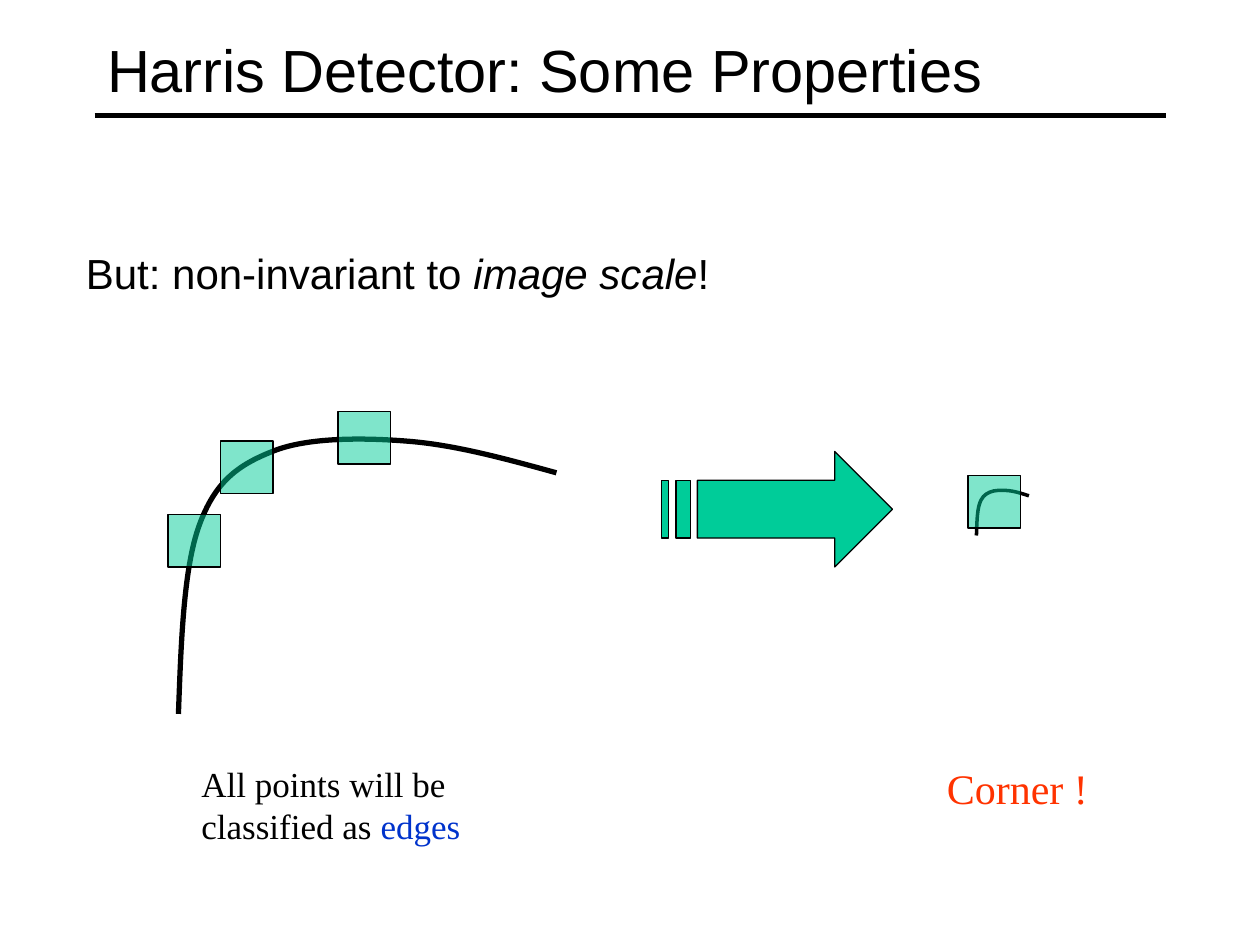
from dataclasses import dataclass
import pptx
import pptx.dml.color
import pptx.enum.shapes
import pptx.enum.text
import pptx.oxml
import pptx.oxml.ns
import pptx.util

Pt = pptx.util.Pt
qn = pptx.oxml.ns.qn
BLACK, GREEN, BLUE, RED = "000000", "00CC99", "0033CC", "FF3300"
SIDE = 30
BEND = [
    (0, 100), (0.7, 73.6), (1.4, 47.2), (5.5, 31.8), (9.7, 16),
    (15.7, 10), (25, 5), (34, 0), (48.6, 0), (61, 1.4),
    (73.5, 2.8), (86.7, 7.8), (100, 12.8),
]


@dataclass
class Box:
    left: float
    top: float
    width: float
    height: float


@dataclass
class Run:
    text: str
    color: str = BLACK
    slant: bool = False


@dataclass
class Label:
    box: Box
    font: str
    size: float
    runs: list[Run]


@dataclass
class Curve:
    box: Box
    weight: float
    windows: list[tuple[float, float]]


CURVES = [
    Curve(Box(558, 280, 30, 26), 2, [(553.2, 271.7)]),
    Curve(Box(102, 250, 216, 158), 3, [(96, 294), (126, 252), (193.2, 235.2)]),
]
BODY = Label(Box(42, 138, 612, 324), "Arial", 24,
             [Run("But: non-invariant to "), Run("image scale", slant=True), Run("!")])
NOTES = [
    Label(Box(108, 432, 204, 55.5), "Times New Roman", 20,
          [Run("All points will be classified as "), Run("edges", BLUE)]),
    Label(Box(534, 432, 108, 36), "Times New Roman", 24, [Run("Corner !", RED)]),
]


def tint(target, color: str) -> None:
    target.rgb = pptx.dml.color.RGBColor.from_string(color)


def paint(shape, fill: str | None, weight: float) -> None:
    shape.shadow.inherit = False
    if fill:
        shape.fill.solid()
        tint(shape.fill.fore_color, fill)
    else:
        shape.fill.background()
    shape.line.width = Pt(weight)
    tint(shape.line.color, BLACK)


def place(shape, box: Box) -> None:
    shape.left, shape.top = Pt(box.left), Pt(box.top)
    shape.width, shape.height = Pt(box.width), Pt(box.height)


def add_title(slide, text: str) -> None:
    title = slide.shapes.title
    place(title, Box(54, 6, 612, 66))
    title.text_frame.text = text
    title.text_frame.vertical_anchor = pptx.enum.text.MSO_ANCHOR.MIDDLE
    para = title.text_frame.paragraphs[0]
    para.alignment = pptx.enum.text.PP_ALIGN.LEFT
    para.font.name, para.font.size = "Arial", Pt(34)
    tint(para.font.color, BLACK)


def add_rule(slide) -> None:
    rule = slide.shapes.add_connector(
        pptx.enum.shapes.MSO_CONNECTOR.STRAIGHT, Pt(54), Pt(66), Pt(666), Pt(66))
    rule.line.width = Pt(3)
    tint(rule.line.color, BLACK)
    props = rule._element.spPr
    props.append(props.makeelement(qn("a:effectLst"), {}))


def add_label(slide, label: Label) -> None:
    box = label.box
    shape = slide.shapes.add_textbox(
        Pt(box.left), Pt(box.top), Pt(box.width), Pt(box.height))
    shape.text_frame.word_wrap = True
    para = shape.text_frame.paragraphs[0]
    para.font.name, para.font.size = label.font, Pt(label.size)
    for part in label.runs:
        run = para.add_run()
        run.text = part.text
        tint(run.font.color, part.color)
        if part.slant:
            run.font.italic = True


def add_path(slide, loops: list, closed: bool):
    loops = [[(Pt(x), Pt(y)) for x, y in loop] for loop in loops]
    pen = slide.shapes.build_freeform(*loops[0][0])
    for index, loop in enumerate(loops):
        if index:
            pen.move_to(*loop[0])
        pen.add_line_segments(loop[1:], close=closed)
    return pen.convert_to_shape()


def bend(shape) -> None:
    track = shape._element.spPr.find(".//" + qn("a:path"))
    lines = track.findall(qn("a:lnTo"))
    for start in range(0, len(lines), 3):
        arc = track.makeelement(qn("a:cubicBezTo"), {})
        track.append(arc)
        for line in lines[start:start + 3]:
            arc.append(line[0])
            track.remove(line)


def add_window(slide, left: float, top: float) -> None:
    shape = slide.shapes.add_shape(
        pptx.enum.shapes.MSO_SHAPE.RECTANGLE, Pt(left), Pt(top), Pt(SIDE), Pt(SIDE))
    paint(shape, GREEN, 0.75)
    tone = shape._element.spPr.find(".//" + qn("a:srgbClr"))
    tone.append(tone.makeelement(qn("a:alpha"), {"val": "50000"}))


def add_curve(slide, curve: Curve) -> None:
    box = curve.box
    points = [(box.left + x * box.width / 100, box.top + y * box.height / 100)
              for x, y in BEND]
    shape = add_path(slide, [points], False)
    bend(shape)
    paint(shape, None, curve.weight)
    for left, top in curve.windows:
        add_window(slide, left, top)


def add_arrow(slide) -> None:
    top, high, low, base = 258, 274.5, 307.5, 324
    neck, tip = 477, 510
    head = [(neck, top), (neck, high), (398.5, high), (398.5, low),
            (neck, low), (neck, base), (tip, (top + base) / 2)]
    bars = [[(a, high), (a, low), (b, low), (b, high)]
            for a, b in ((386.25, 394.5), (378, 382))]
    paint(add_path(slide, [head, *bars], True), GREEN, 0.75)


def main() -> None:
    deck = pptx.Presentation()
    deck.slide_width, deck.slide_height = Pt(720), Pt(540)
    slide = deck.slides.add_slide(deck.slide_layouts[5])
    add_rule(slide)
    add_title(slide, "Harris Detector: Some Properties")
    add_label(slide, BODY)
    for curve in CURVES:
        add_curve(slide, curve)
    add_arrow(slide)
    for note in NOTES:
        add_label(slide, note)
    deck.save("out.pptx")


if __name__ == "__main__":
    main()
